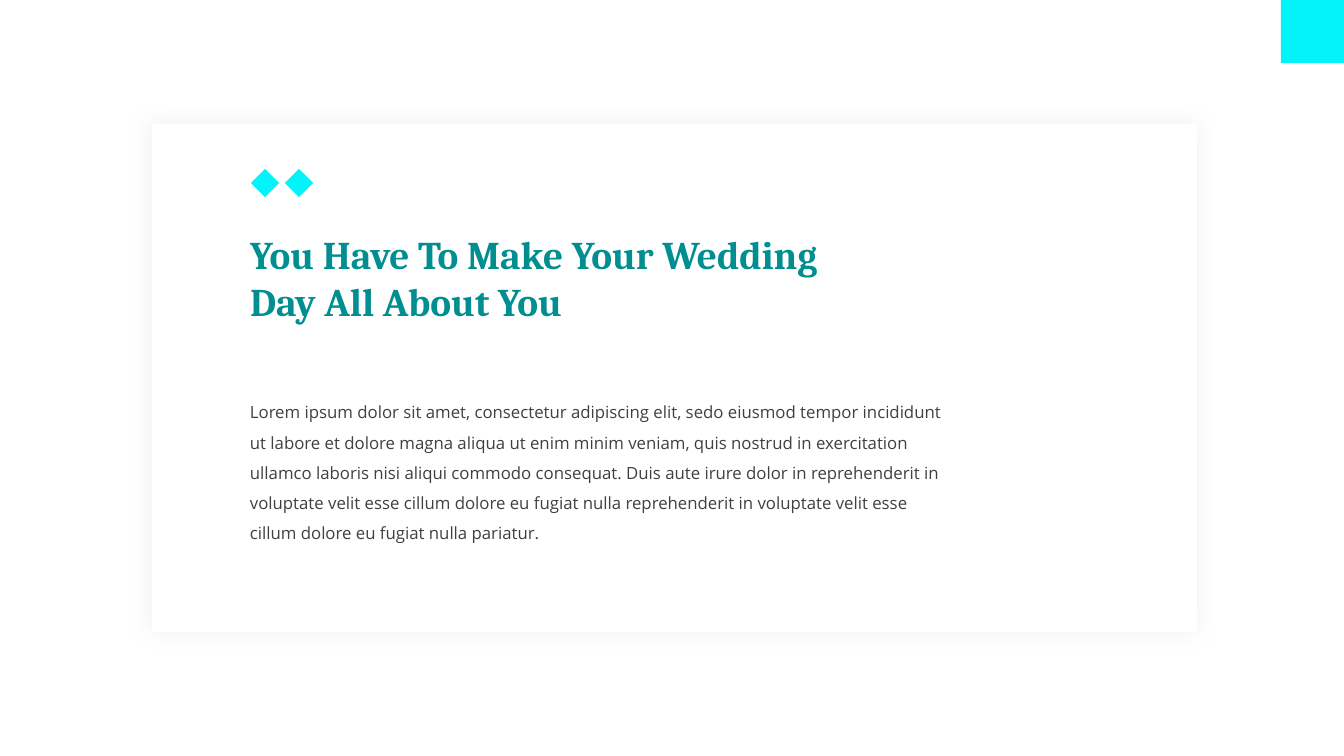
from dataclasses import dataclass

from lxml import etree
from pptx import Presentation
from pptx.dml.color import RGBColor
from pptx.enum.shapes import MSO_SHAPE
from pptx.enum.text import MSO_ANCHOR, MSO_AUTO_SIZE, PP_ALIGN
from pptx.oxml.ns import qn
from pptx.util import Pt

RECTANGLE = MSO_SHAPE.RECTANGLE
LEFT, TOP = PP_ALIGN.LEFT, MSO_ANCHOR.TOP
NO_AUTOFIT = MSO_AUTO_SIZE.NONE

TITLE = "You Have To Make Your Wedding Day All About You"
BODY = (
    "Lorem ipsum dolor sit amet, consectetur adipiscing elit, sedo eiusmod tempor "
    "incididunt ut labore et dolore magna aliqua ut enim minim veniam, quis nostrud in "
    "exercitation ullamco laboris nisi aliqui commodo consequat. Duis aute irure dolor in "
    "reprehenderit in voluptate velit esse cillum dolore eu fugiat nulla reprehenderit in "
    "voluptate velit esse cillum dolore eu fugiat nulla pariatur."
)


@dataclass(frozen=True)
class Theme:
    card: str = "FFFFFF"
    shadow: str = "D9D9D9"
    accent: str = "02F3F9"
    title: str = "018E91"
    body: str = "404040"
    title_font: str = "Cambria"
    body_font: str = "Open Sans"
    title_size: int = 28
    body_size: int = 12


THEME = Theme()

# Lengths in px
EMU_PER_PX = 914400 / 100.8
SLIDE_WIDTH, SLIDE_HEIGHT = 1344, 756
CARD = (152, 124, 1045, 508)
CORNER = 63
DIAMOND_LEFT, DIAMOND_TOP, DIAMOND_SIDE, DIAMOND_PITCH = 255, 173, 20, 34
DIAMOND_COUNT = 2
TITLE_BOX = (240, 225, 636, 105)
BODY_BOX = (240, 387, 727, 159)


def px(length):
    return round(length * EMU_PER_PX)


def add_rectangle(slide, box, color, rotation=0):
    shape = slide.shapes.add_shape(RECTANGLE, *map(px, box))
    shape.shadow.inherit = False
    shape.fill.solid()
    shape.fill.fore_color.rgb = RGBColor.from_string(color)
    shape.line.fill.background()
    shape.rotation = rotation
    return shape


def add_soft_shadow(shape, color, blur, alpha):
    """Give the shape an even glow-like shadow; blur in points, alpha in percent."""
    effects = shape.element.spPr.find(qn("a:effectLst"))
    shadow = etree.SubElement(
        effects, qn("a:outerShdw"), blurRad=str(Pt(blur)), dist="0", dir="0",
        algn="ctr", rotWithShape="0")
    tint = etree.SubElement(shadow, qn("a:srgbClr"), val=color)
    etree.SubElement(tint, qn("a:alpha"), val=str(alpha * 1000))


def set_text(shape, text, font_name, size, color, bold, line_spacing):
    frame = shape.text_frame
    frame.text = text
    frame.word_wrap = True
    frame.auto_size = NO_AUTOFIT
    frame.vertical_anchor = TOP
    paragraph = frame.paragraphs[0]
    paragraph.alignment = LEFT
    paragraph.line_spacing = line_spacing
    font = paragraph.runs[0].font
    font.name, font.size, font.bold = font_name, Pt(size), bold
    font.color.rgb = RGBColor.from_string(color)


def main():
    presentation = Presentation()
    presentation.slide_width = px(SLIDE_WIDTH)
    presentation.slide_height = px(SLIDE_HEIGHT)
    slide = presentation.slides.add_slide(presentation.slide_layouts.get_by_name("Title Only"))

    card = add_rectangle(slide, CARD, THEME.card)
    add_soft_shadow(card, THEME.shadow, blur=15, alpha=40)
    add_rectangle(slide, (SLIDE_WIDTH - CORNER, 0, CORNER, CORNER), THEME.accent)
    for index in range(DIAMOND_COUNT):
        left = DIAMOND_LEFT + index * DIAMOND_PITCH
        add_rectangle(slide, (left, DIAMOND_TOP, DIAMOND_SIDE, DIAMOND_SIDE),
                      THEME.accent, rotation=45)

    body = slide.shapes.add_textbox(*map(px, BODY_BOX))
    set_text(body, BODY, THEME.body_font, THEME.body_size, THEME.body, False, 1.5)

    title = slide.shapes.title
    title.left, title.top, title.width, title.height = map(px, TITLE_BOX)
    set_text(title, TITLE, THEME.title_font, THEME.title_size, THEME.title, True, 1.0)
    body.element.addnext(title.element)  # the title sits in front of the card

    presentation.save("out.pptx")


if __name__ == "__main__":
    main()
